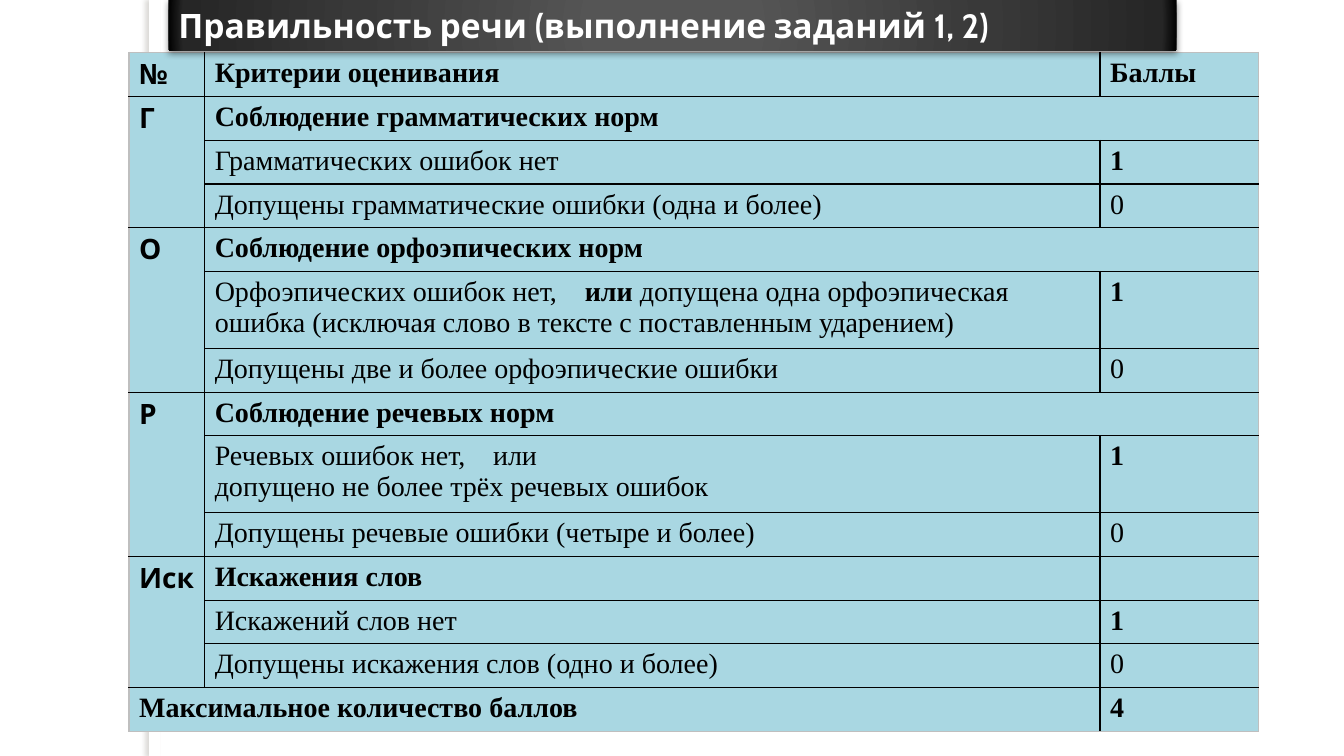
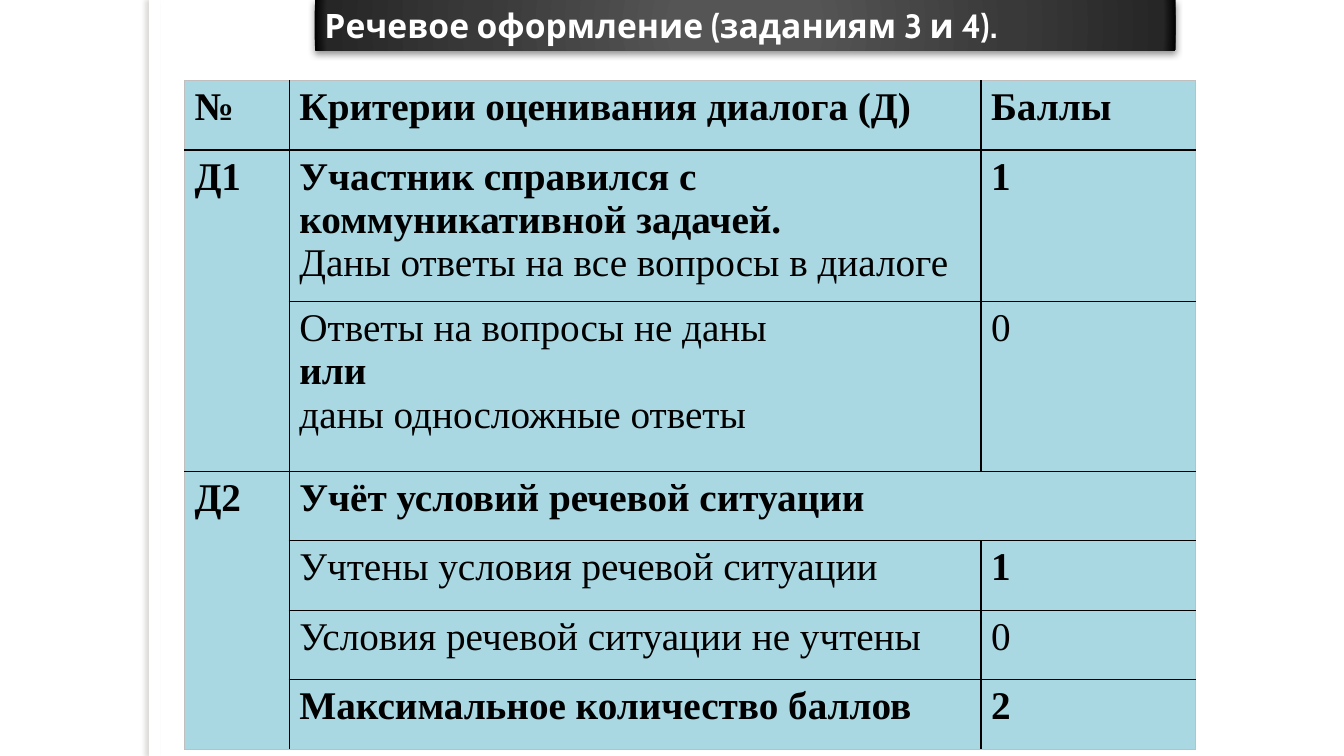
import collections

import pptx
import pptx.dml.color
import pptx.enum.shapes
import pptx.enum.text
import pptx.oxml
import pptx.oxml.ns
import pptx.util

Box = collections.namedtuple("Box", "left top width height")

UNIT = pptx.util.Inches(0.01)
SLIDE = Box(0, 0, 1333, 750)
COLOURS = {
    "paper": "FFFFFF",
    "ink": "000000",
    "cell": "A9D7E2",
    "outer": "BFBFBF",
    "strip_shadow": "736F63",
}
BAND_STOPS = ((0, "555555"), (15, "555555"), (62, "393939"), (97, "262626"), (100, "000000"))
TITLE_FONT = "Cabin"
BODY_FONT = "Times New Roman"
PLAIN_TABLE = "{2D5ABB26-0587-4C30-8999-92F81FD0307C}"
LEFT, UP = "<", "^"
TAB_STOPS = (276, 367)

SPEECH_ROWS = (
    ("*№*", "*Критерии оценивания*", "*Баллы*"),
    ("*Г*", "*Соблюдение грамматических норм*", LEFT),
    (UP, "Грамматических ошибок нет", "*1*"),
    (UP, "Допущены грамматические ошибки (одна и более)", "0"),
    ("*О*", "*Соблюдение орфоэпических норм*", LEFT),
    (UP, "Орфоэпических ошибок нет,\t*или *допущена одна орфоэпическая "
         "ошибка (исключая слово в тексте с поставленным ударением)", "*1*"),
    (UP, "Допущены две и более орфоэпические ошибки", "0"),
    ("*Р*", "*Соблюдение речевых норм*", LEFT),
    (UP, "Речевых ошибок нет,\tили\nдопущено не более трёх речевых ошибок", "*1*"),
    (UP, "Допущены речевые ошибки (четыре и более)", "0"),
    ("*Иск*", "*Искажения слов*", ""),
    (UP, "Искажений слов нет", "*1*"),
    (UP, "Допущены искажения слов (одно и более)", "0"),
    ("*Максимальное количество баллов*", LEFT, "*4*"),
)
DIALOGUE_ROWS = (
    ("*№*", "*Критерии оценивания диалога (Д)*", "*Баллы*"),
    ("*Д1*", "*Участник справился с коммуникативной задачей.*\n"
             "Даны ответы на все вопросы в диалоге", "*1*"),
    (UP, "Ответы на вопросы не даны\n*или*\nданы односложные ответы", "0"),
    ("*Д2*", "*Учёт условий речевой ситуации*", LEFT),
    (UP, "Учтены условия речевой ситуации", "*1*"),
    (UP, "Условия речевой ситуации не учтены", "0"),
    (UP, "*Максимальное количество баллов*", "*2*"),
)


def colour(name):
    """Return the named colour."""
    return pptx.dml.color.RGBColor.from_string(COLOURS[name])


def place(box):
    """Turn a box of grid units into slide lengths."""
    return [side * UNIT for side in box]


def xml(text):
    """Parse a drawing element."""
    head, gap, rest = text.partition(" ")
    return pptx.oxml.parse_xml(f"{head} {pptx.oxml.ns.nsdecls('a')} {rest}")


def add_rect(page, box, shadow, alpha, blur, distance, angle):
    """Add a borderless white rectangle with an outer shadow."""
    rect = page.shapes.add_shape(pptx.enum.shapes.MSO_SHAPE.RECTANGLE, *place(box))
    rect.fill.solid()
    rect.fill.fore_color.rgb = colour("paper")
    rect.line.fill.background()
    rect.shadow.inherit = False
    effects = rect.element.spPr.find(pptx.oxml.ns.qn("a:effectLst"))
    effects.append(xml(
        f'<a:outerShdw blurRad="{pptx.util.Pt(blur)}" dist="{pptx.util.Pt(distance)}" '
        f'dir="{angle * 60000}" algn="ctr" rotWithShape="0"><a:srgbClr val="{COLOURS[shadow]}">'
        f'<a:alpha val="{alpha * 1000}"/></a:srgbClr></a:outerShdw>'))
    return rect


def add_side_strip(deck, page):
    """Put the vertical strip on the slide master."""
    strip = add_rect(page, Box(148, 0, 11, SLIDE.height), "strip_shadow", 25, 3, 3, 180)
    strip.element.nvSpPr.cNvPr.set("id", "20")
    deck.slide_master.shapes.element.append(strip.element)


def write(para, text, size, font, ink, bold):
    """Add one run to a paragraph."""
    span = para.add_run()
    span.text = text
    span.font.size = pptx.util.Pt(size)
    span.font.name = font
    span.font.bold = bold
    span.font.color.rgb = colour(ink)


def add_title_band(page, box, title):
    """Add the dark title band."""
    band = add_rect(page, box, "ink", 43, 5, 2, 90)
    stops = "".join(f'<a:gs pos="{pos * 1000}"><a:srgbClr val="{shade}"/></a:gs>'
                    for pos, shade in BAND_STOPS)
    solid = band.element.spPr.find(pptx.oxml.ns.qn("a:solidFill"))
    band.element.spPr.replace(solid, xml(
        f'<a:gradFill rotWithShape="1"><a:gsLst>{stops}</a:gsLst><a:path path="circle">'
        '<a:fillToRect l="50000" t="50000" r="50000" b="50000"/></a:path></a:gradFill>'))
    frame = band.text_frame
    frame.word_wrap = True
    frame.auto_size = pptx.enum.text.MSO_AUTO_SIZE.SHAPE_TO_FIT_TEXT
    frame.vertical_anchor = pptx.enum.text.MSO_ANCHOR.TOP
    para = frame.paragraphs[0]
    para.alignment = pptx.enum.text.PP_ALIGN.LEFT
    write(para, title, 24, TITLE_FONT, "paper", True)


def fill_cell(cell, text, size, font):
    """Write lines into a cell, with starred parts in bold."""
    for number, line in enumerate(text.split("\n")):
        para = cell.text_frame.add_paragraph() if number else cell.text_frame.paragraphs[0]
        if "\t" in line:
            stops = "".join(f'<a:tab pos="{stop * UNIT}" algn="l"/>' for stop in TAB_STOPS)
            para._p.get_or_add_pPr().append(xml(f"<a:tabLst >{stops}</a:tabLst>"))
        for index, part in enumerate(line.split("*")):
            if part:
                write(para, part, size, font, "ink", index % 2 == 1)


def style_cell(cell, edges):
    """Fill a cell and draw the given edges."""
    cell.fill.solid()
    cell.fill.fore_color.rgb = colour("cell")
    properties = cell._tc.get_or_add_tcPr()
    for index, (side, name) in enumerate(edges):
        properties.insert(index, xml(
            f'<a:ln{side} w="12700"><a:solidFill><a:srgbClr val="{COLOURS[name]}"/>'
            f'</a:solidFill></a:ln{side}>'))


def span_size(rows, row, col):
    """Count the rows and columns that a cell covers."""
    high = wide = 1
    while row + high < len(rows) and rows[row + high][col] == UP:
        high += 1
    while col + wide < len(rows[row]) and rows[row][col + wide] == LEFT:
        wide += 1
    return high, wide


def add_score_table(page, box, rows, widths, heights, size, key_font):
    """Add a table of criteria whose rows and columns share the box."""
    graphic = page.shapes.add_table(len(rows), len(widths), *place(box))
    table = graphic.table
    table.first_row = table.horz_banding = False
    next(graphic.element.iter(pptx.oxml.ns.qn("a:tableStyleId"))).text = PLAIN_TABLE
    for column, width in zip(table.columns, widths):
        column.width = round(box.width * UNIT * width / sum(widths))
    for line, height in zip(table.rows, heights):
        line.height = round(box.height * UNIT * height / sum(heights))
    for row, texts in enumerate(rows):
        for col, text in enumerate(texts):
            if text in (LEFT, UP):
                continue
            high, wide = span_size(rows, row, col)
            bottom, right = row + high, col + wide
            cell = table.cell(row, col)
            if high * wide > 1:
                cell.merge(table.cell(bottom - 1, right - 1))
            fill_cell(cell, text, size, key_font if col == 0 and wide == 1 else BODY_FONT)
            outside = {"L": col == 0, "R": right == len(widths),
                       "T": row == 0, "B": bottom == len(rows)}
            for y in range(row, bottom):
                for x in range(col, right):
                    origin = (y, x) == (row, col)
                    rim = {"L": x == col, "R": x == right - 1,
                           "T": y == row, "B": y == bottom - 1}
                    style_cell(table.cell(y, x), [
                        (side, "outer" if outside[side] else "ink")
                        for side in "LRTB" if origin or rim[side]])


def add_speech_slide(page):
    """Build the slide on correctness of speech."""
    heights = [765 if row in (5, 8) else 434 for row in range(len(SPEECH_ROWS))]
    add_score_table(page, Box(128, 52, 1120, 673), SPEECH_ROWS, (75, 888, 157),
                    heights, 20, TITLE_FONT)
    add_title_band(page, Box(167, 0, 1000, 50), "Правильность речи (выполнение заданий 1, 2)")


def add_dialogue_slide(page):
    """Build the slide on the wording of the dialogue."""
    add_title_band(page, Box(312, 0, 854, 50), "Речевое оформление (заданиям 3 и 4).")
    add_score_table(page, Box(183, 80, 1003, 663), DIALOGUE_ROWS, (104, 686, 213),
                    (69, 150, 169, 69, 69, 69, 69), 28, BODY_FONT)


def main():
    """Build and save the deck."""
    deck = pptx.Presentation()
    deck.slide_width = SLIDE.width * UNIT
    deck.slide_height = SLIDE.height * UNIT
    pages = [deck.slides.add_slide(deck.slide_layouts[6]) for count in range(2)]
    add_side_strip(deck, pages[0])
    add_speech_slide(pages[0])
    add_dialogue_slide(pages[1])
    deck.save("out.pptx")


if __name__ == "__main__":
    main()
